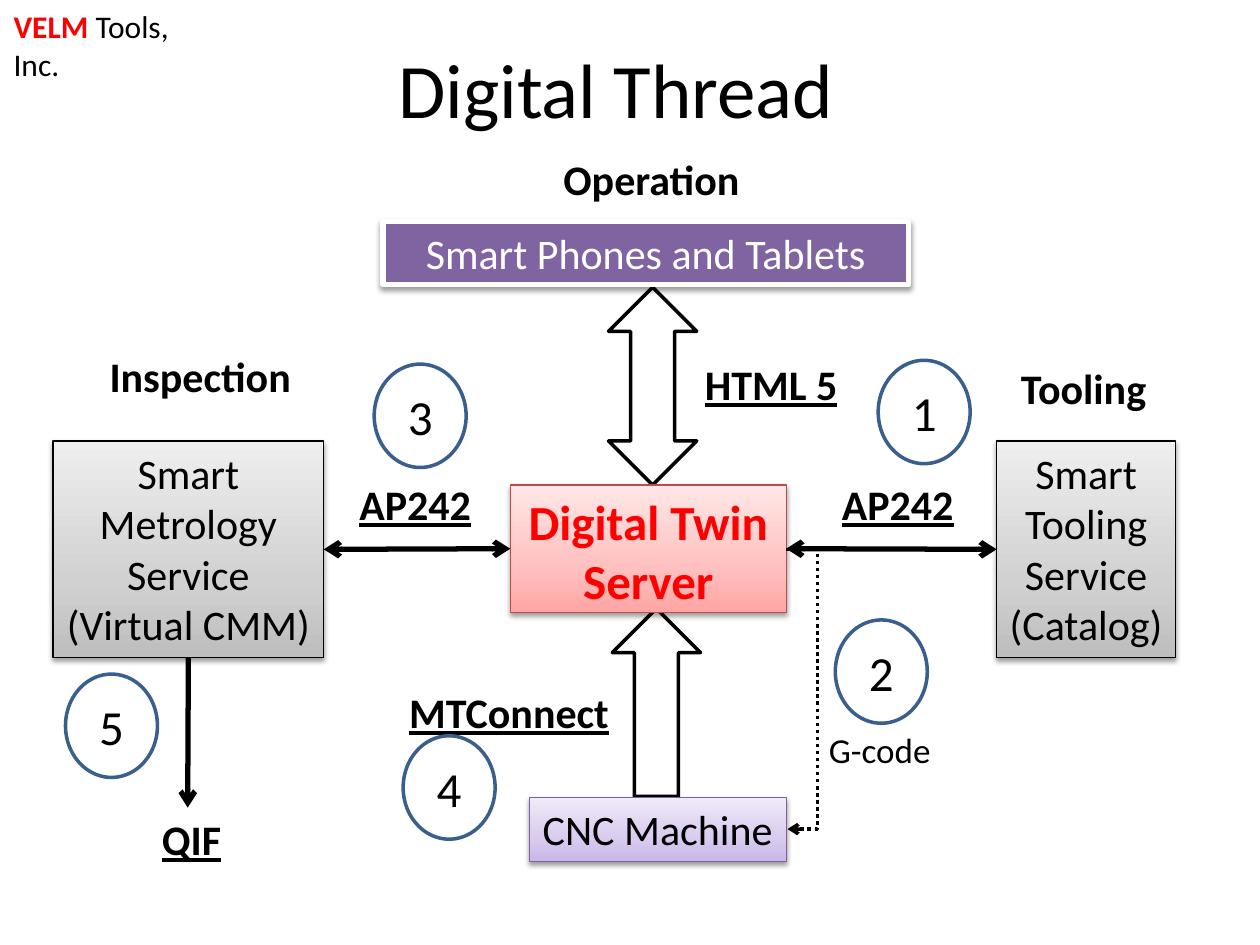
import pptx
import pptx.util
from lxml import etree
from pptx.dml.color import RGBColor
from pptx.enum.dml import MSO_LINE
from pptx.enum.shapes import MSO_CONNECTOR, MSO_SHAPE
from pptx.enum.text import MSO_ANCHOR, PP_ALIGN
from pptx.oxml.ns import qn
from pptx.util import Inches, Pt

FONT = "Calibri"
BLACK = RGBColor(0x00, 0x00, 0x00)
WHITE = RGBColor(0xFF, 0xFF, 0xFF)
RED = RGBColor(0xFF, 0x00, 0x00)
PURPLE = RGBColor(0x80, 0x64, 0xA2)
PURPLE_EDGE = RGBColor(0x7D, 0x60, 0xA0)
RED_EDGE = RGBColor(0xBF, 0x4C, 0x48)
BLUE_EDGE = RGBColor(0x3A, 0x5F, 0x8C)
GREYS = [RGBColor(0xBD, 0xBD, 0xBD), RGBColor(0xD1, 0xD1, 0xD1), RGBColor(0xEE, 0xEE, 0xEE)]
REDS = [RGBColor(0xFF, 0xA6, 0xA5), RGBColor(0xFF, 0xC0, 0xBF), RGBColor(0xFF, 0xE7, 0xE7)]
LILACS = [RGBColor(0xC9, 0xB5, 0xE8), RGBColor(0xD8, 0xCB, 0xEE), RGBColor(0xF0, 0xEA, 0xF9)]
GRADIENT_STOPS = (0, 35, 100)

BLOCK_ARROWS = [
    (MSO_SHAPE.UP_ARROW, (4.86, 4.83, 0.7, 1.49)),
    (MSO_SHAPE.UP_DOWN_ARROW, (4.83, 2.28, 0.7, 1.57)),
]
SYSTEMS = {
    "cnc": (["CNC Machine"], (4.2, 6.33, 2.04, 0.51), LILACS, PURPLE_EDGE, 0.75, 24, BLACK, False, False),
    "twin": (["Digital Twin Server"], (4.05, 3.85, 2.19, 1.01), REDS, RED_EDGE, 0.75, 28, RED, True, True),
    "metrology": (["Smart", "Metrology", "Service", "(Virtual CMM)"], (0.42, 3.5, 2.15, 1.72),
                  GREYS, BLACK, 0.75, 24, BLACK, False, False),
    "tooling": (["Smart", "Tooling", "Service", "(Catalog)"], (7.91, 3.5, 1.42, 1.72),
                GREYS, BLACK, 0.75, 24, BLACK, False, False),
    "phones": (["Smart Phones and Tablets"], (3.04, 1.76, 4.17, 0.5), PURPLE, WHITE, 3, 24, WHITE, False, True),
}
ROLES = [
    ("Operation", (3.59, 1.17, 3.16, 0.5)),
    ("Inspection", (0.76, 2.73, 1.66, 0.5)),
    ("Tooling", (8.0, 2.83, 1.2, 0.5)),
]
STANDARDS = [
    ("AP242", (2.75, 3.75, 1.09, 0.5)),
    ("AP242", (6.58, 3.75, 1.09, 0.5)),
    ("HTML 5", (5.49, 2.8, 1.26, 0.5)),
    ("MTConnect", (3.14, 5.4, 1.8, 0.5)),
    ("QIF", (1.18, 6.41, 0.68, 0.5)),
]
STEP_SIZE = (0.73, 0.82)
STEPS = {"1": (6.97, 2.86), "2": (6.63, 4.92), "3": (2.97, 2.89), "4": (3.2, 5.84), "5": (0.52, 5.35)}


def write(frame, paragraphs, align=PP_ALIGN.CENTER, anchor=MSO_ANCHOR.TOP, wrap=False):
    frame.word_wrap = wrap
    frame.vertical_anchor = anchor
    for index, runs in enumerate(paragraphs):
        paragraph = frame.paragraphs[0] if index == 0 else frame.add_paragraph()
        paragraph.alignment = align
        for text, size, color, bold, underline in runs:
            run = paragraph.add_run()
            run.text = text
            run.font.name = FONT
            run.font.size = Pt(size)
            run.font.color.rgb = color
            run.font.bold = bold
            run.font.underline = underline


def add_label(slide, runs, box, **layout):
    label = slide.shapes.add_textbox(*map(Inches, box))
    write(label.text_frame, [runs], **layout)


def add_figure(slide, preset, box, fill, edge, width):
    figure = slide.shapes.add_shape(preset, *map(Inches, box))
    figure.shadow.inherit = False
    if isinstance(fill, list):
        shade(figure, fill)
    else:
        figure.fill.solid()
        figure.fill.fore_color.rgb = fill
    figure.line.color.rgb = edge
    figure.line.width = Pt(width)
    return figure


def shade(figure, colors):
    figure.fill.gradient()
    gradient = figure._element.spPr.find(qn("a:gradFill"))
    for child in list(gradient):
        gradient.remove(child)
    stops = etree.SubElement(gradient, qn("a:gsLst"))
    for position, color in zip(GRADIENT_STOPS, colors):
        stop = etree.SubElement(stops, qn("a:gs"), pos=str(position * 1000))
        etree.SubElement(stop, qn("a:srgbClr"), val=str(color))
    etree.SubElement(gradient, qn("a:lin"), ang=str(270 * 60000), scaled="0")


def cast_shadow(figure):
    effects = figure._element.spPr.find(qn("a:effectLst"))
    shadow = etree.SubElement(effects, qn("a:outerShdw"), blurRad=str(Pt(3.1)), dist=str(Pt(1.6)),
                              dir=str(90 * 60000), rotWithShape="0")
    color = etree.SubElement(shadow, qn("a:srgbClr"), val=str(BLACK))
    etree.SubElement(color, qn("a:alpha"), val="38000")


def add_link(slide, kind, start, end, width, heads=("tailEnd",), dash=None):
    link = slide.shapes.add_connector(kind, *map(Inches, start + end))
    link.line.color.rgb = BLACK
    link.line.width = Pt(width)
    if dash:
        link.line.dash_style = dash
    line = link.line._get_or_add_ln()
    for head in heads:
        etree.SubElement(line, qn("a:" + head), type="arrow")
    etree.SubElement(link._element.spPr, qn("a:effectLst"))
    return link


def main():
    deck = pptx.Presentation()
    deck.slide_width, deck.slide_height = Inches(10), Inches(7.5)
    slide = deck.slides.add_slide(deck.slide_layouts[6])

    add_label(slide, [("VELM", 18, RED, True, False), (" Tools, Inc.", 18, BLACK, False, False)],
              (0.01, 0.01, 1.77, 0.4), align=PP_ALIGN.LEFT)
    add_label(slide, [("Digital Thread", 44, BLACK, False, False)], (0.39, 0.07, 9, 1.25),
              anchor=MSO_ANCHOR.MIDDLE, wrap=True)

    for preset, box in BLOCK_ARROWS:
        add_figure(slide, preset, box, WHITE, BLACK, 2)

    systems = {}
    for name, (lines, box, fill, edge, width, size, color, bold, wrap) in SYSTEMS.items():
        system = add_figure(slide, MSO_SHAPE.RECTANGLE, box, fill, edge, width)
        cast_shadow(system)
        write(system.text_frame, [[(line, size, color, bold, False)] for line in lines], wrap=wrap)
        systems[name] = system

    both = ("headEnd", "tailEnd")
    straight = MSO_CONNECTOR.STRAIGHT
    for source, source_side, target, target_side, start, end in [
        ("twin", 1, "metrology", 3, (4.05, 4.36), (2.57, 4.36)),
        ("tooling", 1, "twin", 3, (7.91, 4.36), (6.24, 4.36)),
    ]:
        exchange = add_link(slide, straight, start, end, 3, both)
        exchange.begin_connect(systems[source], source_side)
        exchange.end_connect(systems[target], target_side)
    report = add_link(slide, straight, (1.49, 5.22), (1.49, 6.41), 3)
    report.begin_connect(systems["metrology"], 2)

    gcode = add_link(slide, MSO_CONNECTOR.ELBOW, (6.24, 4.36), (6.25, 6.58), 2, dash=MSO_LINE.ROUND_DOT)
    bend = gcode._element.spPr.find(qn("a:prstGeom")).find(qn("a:avLst"))
    etree.SubElement(bend, qn("a:gd"), name="adj1", fmla="val 2500000")
    add_label(slide, [("G-code", 20, BLACK, False, False)], (6.48, 5.73, 1.02, 0.44), align=PP_ALIGN.LEFT)

    for labels, underline in ((ROLES, False), (STANDARDS, True)):
        for text, box in labels:
            add_label(slide, [(text, 24, BLACK, True, underline)], box)

    for number, corner in STEPS.items():
        step = add_figure(slide, MSO_SHAPE.OVAL, corner + STEP_SIZE, WHITE, BLUE_EDGE, 2)
        write(step.text_frame, [[(number, 28, BLACK, False, False)]], anchor=MSO_ANCHOR.MIDDLE, wrap=True)

    deck.save("out.pptx")


if __name__ == "__main__":
    main()
